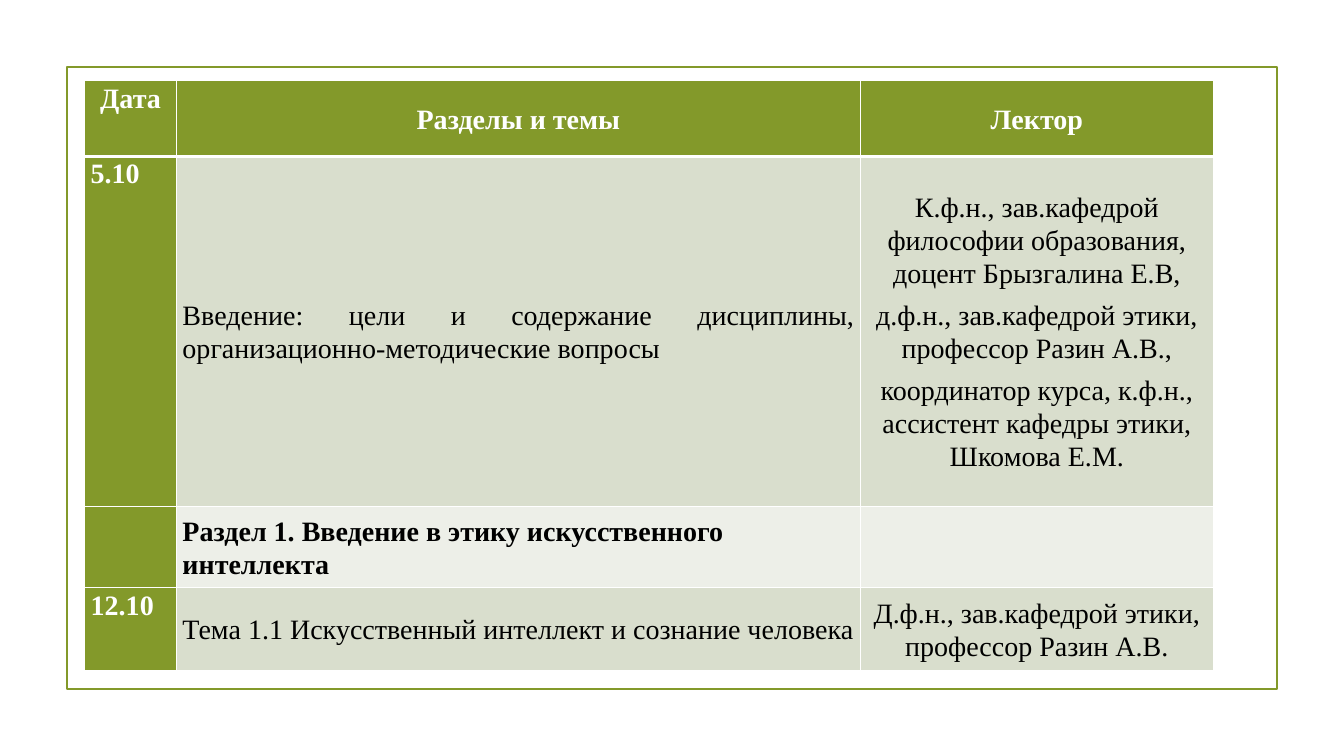
from lxml import etree
from pptx import Presentation
from pptx.dml.color import RGBColor
from pptx.enum.shapes import MSO_SHAPE
from pptx.enum.text import MSO_ANCHOR, PP_ALIGN
from pptx.oxml.ns import qn
from pptx.util import Inches, Pt

RECTANGLE = MSO_SHAPE.RECTANGLE
TOP, MIDDLE = MSO_ANCHOR.TOP, MSO_ANCHOR.MIDDLE
LEFT, CENTER, JUSTIFY = PP_ALIGN.LEFT, PP_ALIGN.CENTER, PP_ALIGN.JUSTIFY

OLIVE, SAGE, MIST = "83992A", "D9DECD", "EDEFE8"
WHITE, BLACK = "FFFFFF", "000000"

COLUMN_SHARES = [6.83, 50.9, 26.25]
ROW_SHARES = [10, 46.27, 10.8, 10.93]

HEADING = {"fill": OLIVE, "color": WHITE, "bold": True, "align": CENTER}
DATE_HEADING = {**HEADING, "anchor": TOP}
DATE = {**DATE_HEADING, "align": JUSTIFY}
TOPIC = {"fill": SAGE}
INTRO = {**TOPIC, "align": JUSTIFY}
LECTURER = {**TOPIC, "align": CENTER, "gap": 3}
SECTION = {"fill": MIST, "bold": True}

SCHEDULE = [
    [(["Дата"], DATE_HEADING), (["Разделы и темы"], HEADING), (["Лектор"], HEADING)],
    [
        (["5.10"], DATE),
        (["Введение: цели и содержание дисциплины, организационно-методические вопросы"], INTRO),
        (
            [
                "К.ф.н., зав.кафедрой философии образования, доцент Брызгалина Е.В,",
                "д.ф.н., зав.кафедрой этики, профессор Разин А.В.,",
                "координатор курса, к.ф.н., ассистент кафедры этики, Шкомова Е.М.",
            ],
            LECTURER,
        ),
    ],
    [([], DATE), (["Раздел 1. Введение в этику искусственного интеллекта"], SECTION), ([], SECTION)],
    [
        (["12.10"], DATE),
        (["Тема 1.1 Искусственный интеллект и сознание человека"], TOPIC),
        (["Д.ф.н., зав.кафедрой этики, профессор Разин А.В."], LECTURER),
    ],
]


def rgb(value):
    return RGBColor.from_string(value)


def apply(target, formats):
    for attribute, value in formats.items():
        setattr(target, attribute, value)


class SlideBuilder:
    font = {"name": "Times New Roman", "size": Pt(20)}
    line_spacing = 1.07
    side_margin = 0.45

    def __init__(self, presentation):
        self.width = presentation.slide_width
        self.height = presentation.slide_height
        self.slide = presentation.slides.add_slide(presentation.slide_layouts[6])

    def across(self, percent):
        return round(self.width * percent / 100)

    def down(self, percent):
        return round(self.height * percent / 100)

    def frame(self, left, top, width, height, color, weight):
        outline = self.slide.shapes.add_shape(
            RECTANGLE, self.across(left), self.down(top), self.across(width), self.down(height)
        )
        outline.shadow.inherit = False
        outline.fill.background()
        outline.line.color.rgb = rgb(color)
        outline.line.width = Pt(weight)

    def table(self, left, top, columns, rows, content):
        grid = self.slide.shapes.add_table(
            len(rows), len(columns), self.across(left), self.down(top),
            self.across(sum(columns)), self.down(sum(rows)),
        ).table
        apply(grid, {"first_row": False, "horz_banding": False})
        for column, share in zip(grid.columns, columns):
            column.width = self.across(share)
        for row, share in zip(grid.rows, rows):
            row.height = self.down(share)
        for r, entries in enumerate(content):
            for c, (paragraphs, style) in enumerate(entries):
                self.cell(grid.cell(r, c), paragraphs, style)
                self.borders(grid.cell(r, c), 3 if r == 1 else 1, 3 if r == 0 else 1)

    def cell(self, cell, paragraphs, style):
        margin = self.across(self.side_margin)
        apply(cell, {
            "margin_left": margin, "margin_right": margin,
            "margin_top": 0, "margin_bottom": 0,
            "vertical_anchor": style.get("anchor", MIDDLE),
        })
        cell.fill.solid()
        cell.fill.fore_color.rgb = rgb(style["fill"])
        gap = Pt(style.get("gap", 0))
        for index, text in enumerate(paragraphs):
            paragraph = cell.text_frame.add_paragraph() if index else cell.text_frame.paragraphs[0]
            apply(paragraph, {
                "alignment": style.get("align", LEFT),
                "line_spacing": self.line_spacing,
                "space_before": gap if index else Pt(0),
                "space_after": gap,
            })
            run = paragraph.add_run()
            run.text = text
            apply(run.font, {**self.font, "bold": style.get("bold", False)})
            run.font.color.rgb = rgb(style.get("color", BLACK))

    def borders(self, cell, top, bottom):
        properties = cell._tc.get_or_add_tcPr()
        weights = {"a:lnL": 1, "a:lnR": 1, "a:lnT": top, "a:lnB": bottom}
        for position, (tag, weight) in enumerate(weights.items()):
            edge = etree.Element(qn(tag), w=str(Pt(weight)))
            fill = etree.SubElement(edge, qn("a:solidFill"))
            etree.SubElement(fill, qn("a:srgbClr"), val=WHITE)
            properties.insert(position, edge)


def main():
    presentation = Presentation()
    presentation.slide_width = Inches(13.33)
    presentation.slide_height = Inches(7.5)
    builder = SlideBuilder(presentation)
    builder.frame(5, 8.9, 90, 82.2, OLIVE, 1.25)
    builder.table(6.3, 10.7, COLUMN_SHARES, ROW_SHARES, SCHEDULE)
    presentation.save("out.pptx")


if __name__ == "__main__":
    main()
